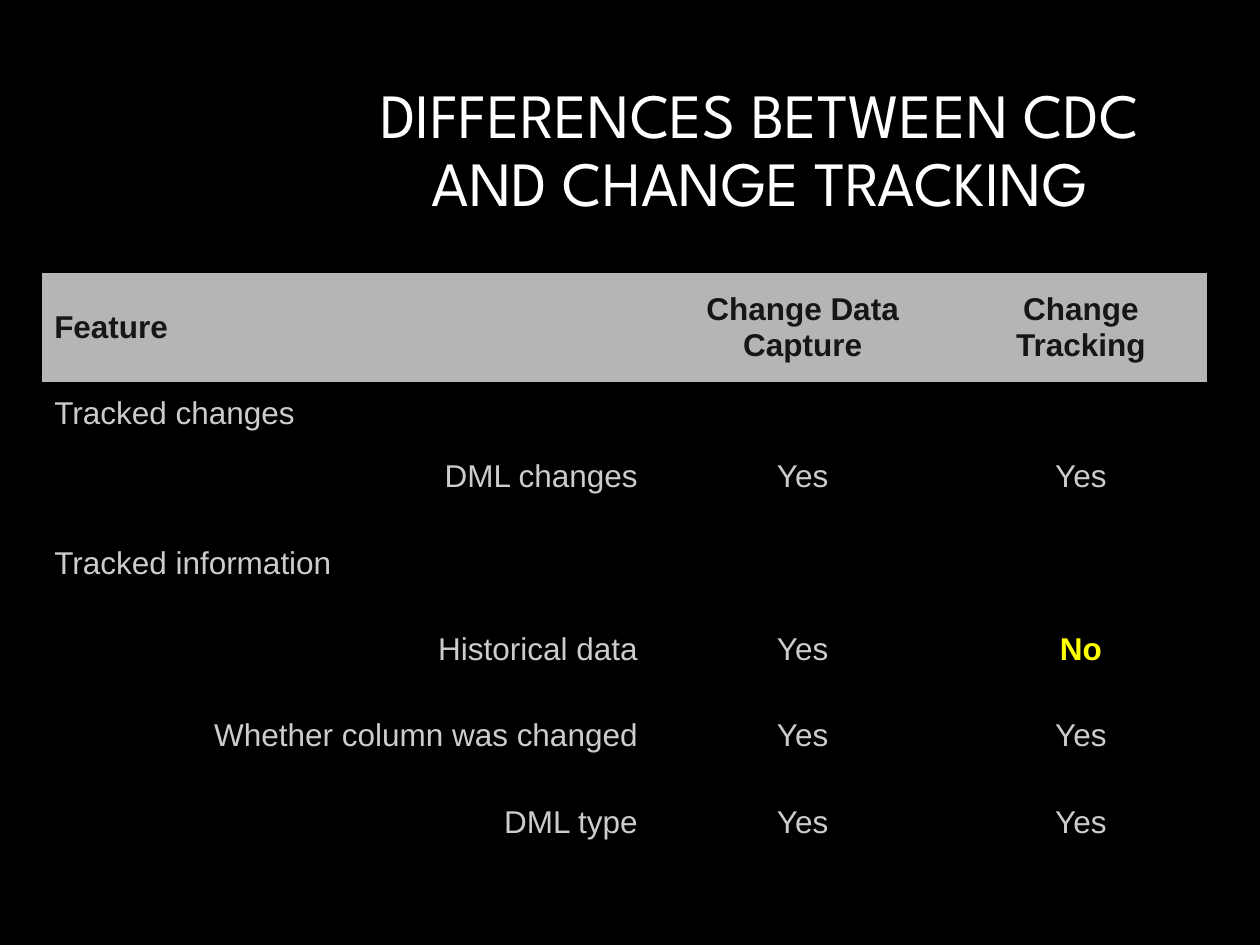
from pptx import Presentation
from pptx.dml.color import RGBColor
from pptx.enum.text import MSO_ANCHOR, PP_ALIGN
from pptx.oxml.ns import qn
from pptx.util import Cm, Pt

LEFT, CENTER, RIGHT = PP_ALIGN.LEFT, PP_ALIGN.CENTER, PP_ALIGN.RIGHT
MIDDLE = MSO_ANCHOR.MIDDLE
PLAIN_TABLE_STYLE = "{2D5ABB26-0587-4C30-8999-92F81FD0307C}"

BLACK, WHITE, YELLOW = "000000", "FFFFFF", "FFFF00"
HEADER_FILL, HEADER_TEXT, BODY_TEXT = "B5B5B5", "161616", "CCCCCC"

SHORT_ROW, TALL_ROW = 1.27, 2.21
ROW_HEIGHTS = [TALL_ROW, SHORT_ROW, SHORT_ROW, TALL_ROW, SHORT_ROW, TALL_ROW, SHORT_ROW]
COLUMN_WIDTHS = [12.27, 6.14, 5.08]
FEATURES = [
    ("Feature", "Change Data Capture", "Change Tracking"),
    ("Tracked changes", "", ""),
    ("DML changes", "Yes", "Yes"),
    ("Tracked information", "", ""),
    ("Historical data", "Yes", "No"),
    ("Whether column was changed", "Yes", "Yes"),
    ("DML type", "Yes", "Yes"),
]


def color(value):
    return RGBColor.from_string(value)


def write(frame, text, font="Arial", size=18, ink=BODY_TEXT, bold=False, align=LEFT, spacing=None):
    para = frame.paragraphs[0]
    para.alignment = align
    para.line_spacing = spacing
    span = para.add_run()
    span.text = text
    span.font.name = font
    span.font.size = Pt(size)
    span.font.bold = bold
    span.font.color.rgb = color(ink)


def add_title(page, text):
    box = page.shapes.add_textbox(Cm(6.35), Cm(1.27), Cm(17.93), Cm(3.58))
    frame = box.text_frame
    frame.word_wrap = True
    frame.vertical_anchor = MIDDLE
    write(frame, text, font="League Spartan", size=36, ink=WHITE, align=CENTER, spacing=0.9)


def cell_format(text, row, column, is_group):
    if row == 0:
        return {"ink": HEADER_TEXT, "bold": True, "align": CENTER if column else LEFT}
    if column == 0:
        return {"align": LEFT if is_group else RIGHT}
    if text == "No":
        return {"ink": YELLOW, "bold": True, "align": CENTER}
    return {"align": CENTER}


def fill_cell(cell, text, row, column, is_group):
    cell.vertical_anchor = MIDDLE
    if row == 0:
        cell.fill.solid()
        cell.fill.fore_color.rgb = color(HEADER_FILL)
    else:
        cell.fill.background()
    if text:
        write(cell.text_frame, text, **cell_format(text, row, column, is_group))


def add_feature_table(page):
    holder = page.shapes.add_table(
        len(FEATURES), len(COLUMN_WIDTHS), Cm(0.84), Cm(5.5),
        Cm(sum(COLUMN_WIDTHS)), Cm(sum(ROW_HEIGHTS)))
    table = holder.table
    table.horz_banding = False
    table._tbl.tblPr.find(qn("a:tableStyleId")).text = PLAIN_TABLE_STYLE
    for column, width in zip(table.columns, COLUMN_WIDTHS):
        column.width = Cm(width)
    for row, height in zip(table.rows, ROW_HEIGHTS):
        row.height = Cm(height)
    for row, texts in enumerate(FEATURES):
        is_group = not any(texts[1:])
        for column, text in enumerate(texts):
            fill_cell(table.cell(row, column), text, row, column, is_group)


def main():
    deck = Presentation()
    deck.slide_width, deck.slide_height = Cm(25.4), Cm(19.05)
    page = deck.slides.add_slide(deck.slide_layouts[6])
    page.background.fill.solid()
    page.background.fill.fore_color.rgb = color(BLACK)
    add_title(page, "DIFFERENCES BETWEEN CDC AND CHANGE TRACKING")
    add_feature_table(page)
    deck.save("out.pptx")


if __name__ == "__main__":
    main()
